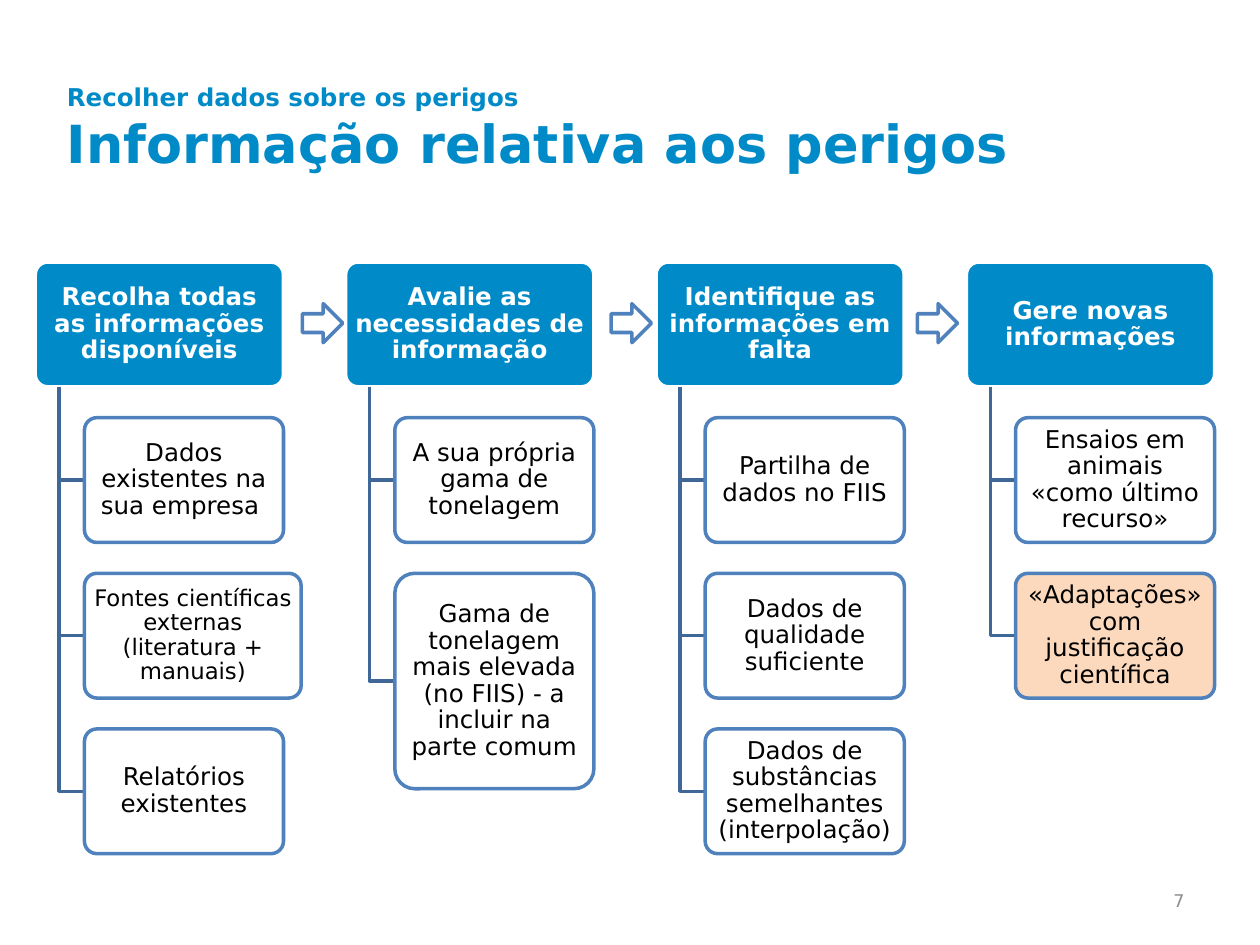
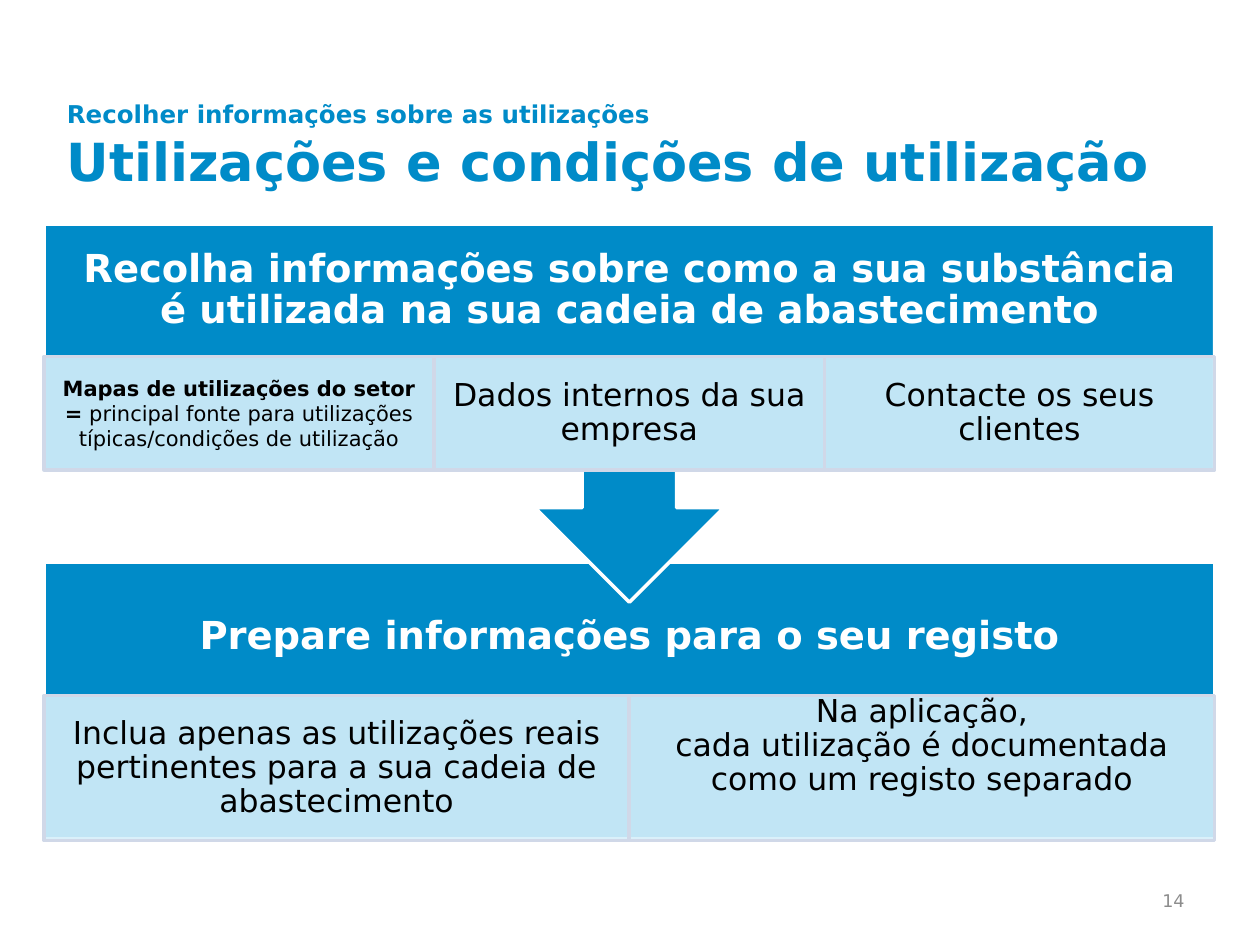
from lxml.etree import SubElement
from pptx import Presentation
from pptx.dml.color import RGBColor
from pptx.enum.shapes import MSO_SHAPE as Shape
from pptx.enum.text import MSO_ANCHOR as Anchor, MSO_AUTO_SIZE as AutoSize, PP_ALIGN as Align
from pptx.oxml.ns import qn
from pptx.util import Inches, Pt

BLUE = RGBColor(0x00, 0x8B, 0xC8)
OUTLINE = RGBColor(0x4F, 0x81, 0xBD)
BRANCH = RGBColor(0x3F, 0x67, 0x97)
PALE = RGBColor(0xD7, 0xEF, 0xFA)
PALE_EDGE = RGBColor(0xD0, 0xD8, 0xE8)
PEACH = RGBColor(0xFC, 0xD5, 0xB5)
GREY = RGBColor(0x8C, 0x8C, 0x8C)
WHITE = RGBColor(0xFF, 0xFF, 0xFF)
BLACK = RGBColor(0x00, 0x00, 0x00)
FONT = "DejaVu Sans"

# Flow of columns
FLOW_LEFT, FLOW_TOP = 0.28, 2.08
COLUMN_PITCH = 7.39 / 3
HEAD_WIDTH, ITEM_WIDTH, BOX_HEIGHT = 1.97, 1.58, 0.99
TRUNK_INDENT, ITEM_INDENT, ITEM_GAP = 0.19, 0.39, 0.245
ARROW_LEFTS = (2.4, 4.85, 7.28)

COLUMNS = [
    ("Recolha todas as informações disponíveis", [
        ("Dados existentes na sua empresa ", {}),
        ("Fontes científicas externas (literatura + manuais)", {"width": 1.72, "size": 13}),
        ("Relatórios existentes", {}),
    ]),
    ("Avalie as necessidades de informação", [
        ("A sua própria gama de tonelagem", {}),
        ("Gama de tonelagem mais elevada (no FIIS) - a incluir na parte comum", {"height": 1.71}),
    ]),
    ("Identifique as informações em falta", [
        ("Partilha de dados no FIIS", {}),
        ("Dados de qualidade suficiente", {}),
        ("Dados de substâncias semelhantes (interpolação)", {}),
    ]),
    ("Gere novas informações", [
        ("Ensaios em animais «como último recurso»", {}),
        ("«Adaptações» com justificação científica", {"fill": PEACH}),
    ]),
]

# Stacked panels
PANEL_LEFT, PANEL_WIDTH = 0.35, 9.29


def add_text(paragraph, text, size=14, color=BLACK, bold=False, align=Align.CENTER, spacing=None):
    """Append text to a paragraph; a newline becomes a line break."""
    paragraph.alignment = align
    paragraph.line_spacing = spacing
    for index, line in enumerate(text.split("\n")):
        if index:
            paragraph.add_line_break()
        span = paragraph.add_run()
        span.text = line
        span.font.name = FONT
        span.font.size = Pt(size)
        span.font.bold = bold
        span.font.color.rgb = color


def set_frame(box, insets=(0.1, 0.05, 0.1, 0.05), anchor=Anchor.MIDDLE):
    """Wrap and anchor a text frame and return its first paragraph."""
    frame = box.text_frame
    frame.word_wrap = True
    frame.auto_size = AutoSize.NONE
    frame.vertical_anchor = anchor
    (frame.margin_left, frame.margin_top,
     frame.margin_right, frame.margin_bottom) = map(Inches, insets)
    return frame.paragraphs[0]


def add_box(page, kind, left, top, width, height, fill, line, alpha=None):
    box = page.shapes.add_shape(kind, *map(Inches, (left, top, width, height)))
    box.shadow.inherit = False
    box.fill.solid()
    box.fill.fore_color.rgb = fill
    box.line.color.rgb = line
    box.line.width = Pt(2)
    if alpha:
        color = box.fill._xPr.find(qn("a:solidFill"))[0]
        SubElement(color, qn("a:alpha")).set("val", str(alpha * 1000))
    return box


def add_page(deck, kicker, title, number, title_top):
    """Add a slide with its two-line title and page number."""
    page = deck.slides.add_slide(deck.slide_layouts[5])
    heading = page.shapes.title
    heading.left, heading.top = Inches(0.43), Inches(title_top)
    heading.width, heading.height = Inches(8.99), Inches(1.25)
    first = set_frame(heading)
    add_text(first, kicker, color=BLUE, bold=True, align=Align.LEFT)
    second = heading.text_frame.add_paragraph()
    add_text(second, title, size=30, color=BLUE, bold=True, align=Align.LEFT)
    for para in (first, second):
        para.space_before = Pt(0)
    footer = page.shapes.add_textbox(*map(Inches, (7.17, 6.95, 2.33, 0.4)))
    add_text(set_frame(footer), number, size=10, color=GREY, align=Align.RIGHT)
    return page


def add_rounded(page, text, left, top, width, height, fill, line, alpha=None, **style):
    box = add_box(page, Shape.ROUNDED_RECTANGLE, left, top, width, height, fill, line, alpha)
    box.adjustments[0] = 0.1
    add_text(set_frame(box, (0.03, 0.02, 0.03, 0.02)), text, spacing=0.9, **style)


def add_branch(page, left, top, right, bottom):
    """Draw a line down from a heading and across to an item."""
    left, top, right, bottom = map(Inches, (left, top, right, bottom))
    builder = page.shapes.build_freeform(left, top)
    builder.add_line_segments([(left, bottom), (right, bottom)], close=False)
    branch = builder.convert_to_shape()
    branch.shadow.inherit = False
    branch.fill.background()
    branch.line.color.rgb = BRANCH
    branch.line.width = Pt(2)


def add_column(page, left, heading, items):
    add_rounded(page, heading, left, FLOW_TOP, HEAD_WIDTH, BOX_HEIGHT, BLUE, WHITE,
                color=WHITE, bold=True)
    head_bottom = FLOW_TOP + BOX_HEIGHT
    item_left = left + ITEM_INDENT
    top = head_bottom + ITEM_GAP
    for text, options in items:
        height = options.get("height", BOX_HEIGHT)
        add_branch(page, left + TRUNK_INDENT, head_bottom, item_left, top + height / 2)
        add_rounded(page, text, item_left, top, options.get("width", ITEM_WIDTH), height,
                    options.get("fill", WHITE), OUTLINE, alpha=90,
                    size=options.get("size", 14))
        top += height + ITEM_GAP


def add_panel(page, kind, text, top, height, text_height):
    """Add a blue panel whose text stays in its upper part."""
    panel = add_box(page, kind, PANEL_LEFT, top, PANEL_WIDTH, height, BLUE, WHITE)
    body = height * panel.adjustments[3] if kind == Shape.DOWN_ARROW_CALLOUT else height
    para = set_frame(panel, (0.17, 0.17, 0.17, body - text_height + 0.17))
    add_text(para, text, size=22, color=WHITE, bold=True, spacing=0.9)


def add_cells(page, count, top, height):
    """Split the panel width into equal pale cells."""
    width = PANEL_WIDTH / count
    return [add_box(page, Shape.RECTANGLE, PANEL_LEFT + index * width, top, width, height,
                    PALE, PALE_EDGE, alpha=90) for index in range(count)]


def fill_cell(cell, text, insets=(0.14, 0.03, 0.14, 0.03), anchor=Anchor.MIDDLE):
    add_text(set_frame(cell, insets, anchor), text, size=18, spacing=0.9)


def build_hazard_page(deck):
    page = add_page(deck, "Recolher dados sobre os perigos",
                    "Informação relativa aos perigos", "7", title_top=0.39)
    for index, (heading, items) in enumerate(COLUMNS):
        add_column(page, FLOW_LEFT + index * COLUMN_PITCH, heading, items)
    for left in ARROW_LEFTS:
        arrow = add_box(page, Shape.RIGHT_ARROW, left, 2.41, 0.32, 0.31, WHITE, OUTLINE)
        arrow.adjustments[0] = 0.48


def build_uses_page(deck):
    page = add_page(deck, "Recolher informações sobre as utilizações",
                    "Utilizações e condições de utilização", "14", title_top=0.53)
    add_panel(page, Shape.RECTANGLE, "Prepare informações para o seu registo",
              top=4.46, height=2.2, text_height=1.19)
    real_uses, records = add_cells(page, 2, top=5.52, height=1.15)
    fill_cell(real_uses, "Inclua apenas as utilizações reais pertinentes "
                         "para a sua cadeia de abastecimento")
    fill_cell(records, "Na aplicação,\ncada utilização é documentada como um registo separado",
              insets=(0.14, 0, 0.14, 0), anchor=Anchor.TOP)

    add_panel(page, Shape.DOWN_ARROW_CALLOUT,
              "Recolha informações sobre como a sua substância "
              "é utilizada na sua cadeia de abastecimento",
              top=1.78, height=3, text_height=1.05)
    use_maps, company_data, customers = add_cells(page, 3, top=2.83, height=0.9)
    para = set_frame(use_maps, (0.09, 0.02, 0.09, 0.02))
    add_text(para, "Mapas de utilizações do setor\n=", size=12, bold=True)
    add_text(para, " principal fonte para utilizações típicas/condições de utilização", size=12)
    fill_cell(company_data, "Dados internos da sua empresa")
    fill_cell(customers, "Contacte os seus clientes")


def main():
    deck = Presentation()
    deck.slide_width, deck.slide_height = Inches(10), Inches(7.5)
    build_hazard_page(deck)
    build_uses_page(deck)
    deck.save("out.pptx")


if __name__ == "__main__":
    main()
